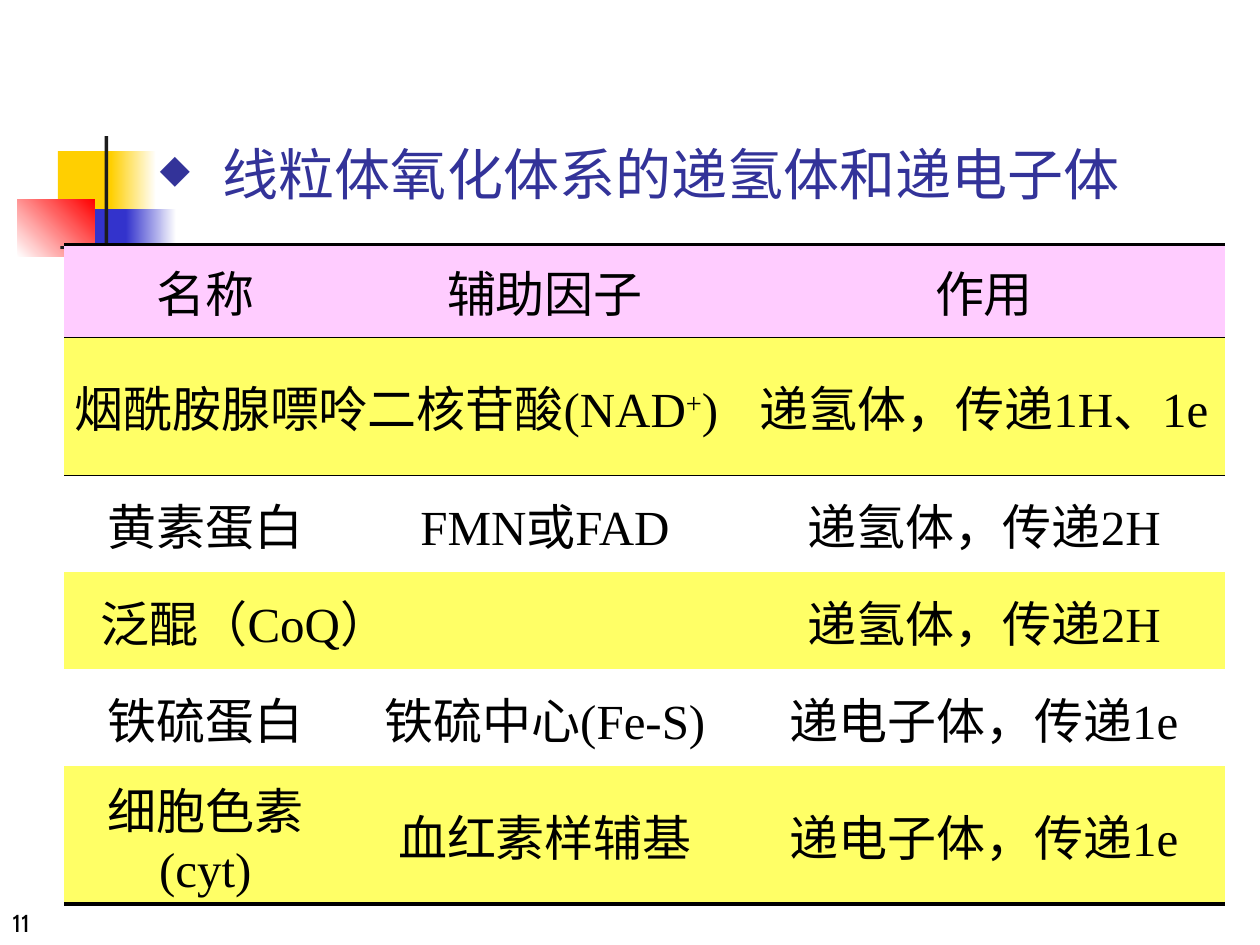
from dataclasses import dataclass

from lxml import etree
from pptx import Presentation
from pptx.dml.color import RGBColor
from pptx.enum.shapes import MSO_SHAPE
from pptx.enum.text import MSO_ANCHOR, MSO_AUTO_SIZE, PP_ALIGN
from pptx.oxml.ns import qn
from pptx.util import Inches, Pt

RECTANGLE = MSO_SHAPE.RECTANGLE
TOP, MIDDLE, BOTTOM = MSO_ANCHOR.TOP, MSO_ANCHOR.MIDDLE, MSO_ANCHOR.BOTTOM
LEFT, CENTER = PP_ALIGN.LEFT, PP_ALIGN.CENTER
FIT_SHAPE = MSO_AUTO_SIZE.SHAPE_TO_FIT_TEXT
PLAIN_TABLE = "{2D5ABB26-0587-4C30-8999-92F81FD0307C}"


@dataclass(frozen=True)
class Theme:
    black: str = "000000"
    white: str = "FFFFFF"
    title: str = "333399"
    gold: str = "FFCF01"
    blue: str = "3333CC"
    red: str = "FF0000"
    ink: str = "1C1C1C"
    header: str = "FFCCFF"
    band: str = "FFFF66"
    heading_font: str = "Cabin"
    table_font: str = "Times New Roman"
    title_size: float = 32
    table_size: float = 28
    number_size: float = 14
    thick: float = 2.25
    thin: float = 1


THEME = Theme()

ORNAMENTS = [
    ((0.46, 1.2, 0.48, 0.52), [THEME.gold], 0),
    ((0.88, 1.2, 0.36, 0.52), [THEME.gold, THEME.white], 0),
    ((0.59, 1.66, 0.46, 0.52), [THEME.blue], 0),
    ((1, 1.66, 0.4, 0.52), [THEME.blue, THEME.white], 0),
    ((0.14, 1.58, 0.61, 0.46), [THEME.white, THEME.red], 45),
    ((0.83, 1.08, 0.03, 1.15), [THEME.ink], 0),
    ((0.48, 1.95, 9, 0.03), [THEME.ink, THEME.white], 0),
]
COLUMNS = [2.24, 3.15, 3.82]
HEIGHTS = [0.74, 0.74, 0.77, 0.77, 0.77, 0.89]
CARRIERS = [
    ["名称", "辅助因子", "作用"],
    [["烟酰胺腺嘌呤二核苷酸(NAD", "+", ")"], None, "递氢体，传递1H、1e"],
    ["黄素蛋白", "FMN或FAD", "递氢体，传递2H"],
    ["泛醌（CoQ）", None, "递氢体，传递2H"],
    ["铁硫蛋白", "铁硫中心(Fe-S)", "递电子体，传递1e"],
    ["细胞色素(cyt)", "血红素样辅基", "递电子体，传递1e"],
]


def write_text(frame, text, *, font, size, color, align=LEFT, anchor=TOP, before=0):
    frame.word_wrap = True
    frame.vertical_anchor = anchor
    para = frame.paragraphs[0]
    para.alignment = align
    para.space_before = Pt(before)
    for index, part in enumerate([text] if isinstance(text, str) else text):
        span = para.add_run()
        span.text = part
        span.font.name = font
        span.font.size = Pt(size)
        span.font.color.rgb = RGBColor.from_string(color)
        if index % 2:
            span.font._element.set("baseline", "30000")
    return para


def set_indent(para, margin, first=0):
    properties = para._p.get_or_add_pPr()
    properties.set("marL", str(Inches(margin)))
    properties.set("indent", str(Inches(first)))
    return properties


def add_ornament(page, box, colors, angle):
    shape = page.shapes.add_shape(RECTANGLE, *map(Inches, box))
    shape.shadow.inherit = False
    shape.line.fill.background()
    if len(colors) == 1:
        shape.fill.solid()
        shape.fill.fore_color.rgb = RGBColor.from_string(colors[0])
        return
    shape.fill.gradient()
    shape.fill.gradient_angle = angle
    for stop, color, position in zip(shape.fill.gradient_stops, colors, (0, 1)):
        stop.color.rgb = RGBColor.from_string(color)
        stop.position = position


def add_title(page, box, text):
    frame = page.shapes.add_textbox(*map(Inches, box)).text_frame
    frame.auto_size = FIT_SHAPE
    para = write_text(frame, text, font=THEME.heading_font, size=THEME.title_size,
                      color=THEME.title, align=CENTER)
    properties = set_indent(para, 0.5, -0.5)
    etree.SubElement(properties, qn("a:buSzPct"), val="70000")
    etree.SubElement(properties, qn("a:buChar"), char="◆")


def add_number(page, box, text):
    frame = page.shapes.add_textbox(*map(Inches, box)).text_frame
    write_text(frame, text, font=THEME.heading_font, size=THEME.number_size,
               color=THEME.black, anchor=BOTTOM)


def set_border(cell, side, width):
    line = etree.Element(qn(f"a:{side}"), w=str(Pt(width)))
    fill = etree.SubElement(line, qn("a:solidFill"))
    etree.SubElement(fill, qn("a:srgbClr"), val=THEME.black)
    properties = cell._tc.get_or_add_tcPr()
    properties.insert(len(properties.findall(qn("a:lnT"))), line)


def style_cell(cell, row):
    color = THEME.header if row == 0 else THEME.band if row % 2 else None
    if color:
        cell.fill.solid()
        cell.fill.fore_color.rgb = RGBColor.from_string(color)
    else:
        cell.fill.background()
    if row == 0:
        set_border(cell, "lnT", THEME.thick)
        set_border(cell, "lnB", THEME.thin)
    elif row == 1:
        set_border(cell, "lnT", THEME.thin)
    elif row == len(CARRIERS) - 1:
        set_border(cell, "lnB", THEME.thick)


def add_carrier_table(page, box):
    table = page.shapes.add_table(len(CARRIERS), len(COLUMNS), *map(Inches, box)).table
    table.first_row = table.horz_banding = False
    table._tbl.tblPr.find(qn("a:tableStyleId")).text = PLAIN_TABLE
    for column, width in zip(table.columns, COLUMNS):
        column.width = Inches(width)
    for row, height in zip(table.rows, HEIGHTS):
        row.height = Inches(height)
    for row, texts in enumerate(CARRIERS):
        merged = texts[1] is None
        if merged:
            table.cell(row, 0).merge(table.cell(row, 1))
        for column, text in enumerate(texts):
            cell = table.cell(row, column)
            style_cell(cell, row)
            if text is None:
                continue
            spans = merged and column == 0
            para = write_text(cell.text_frame, text, font=THEME.table_font,
                              size=THEME.table_size, color=THEME.black,
                              align=LEFT if spans else CENTER,
                              before=THEME.table_size * 0.2)
            cell.vertical_anchor = MIDDLE
            cell.margin_left = cell.margin_right = Inches(0.1)
            cell.margin_top = cell.margin_bottom = Inches(0.05)
            if isinstance(text, list):
                cell.margin_left, cell.margin_right = Inches(0.08), Inches(0)
            elif spans:
                set_indent(para, 0.19)


def main():
    deck = Presentation()
    deck.slide_width, deck.slide_height = Inches(10), Inches(7.5)
    page = deck.slides.add_slide(deck.slide_layouts[6])
    for box, colors, angle in ORNAMENTS:
        add_ornament(page, box, colors, angle)
    add_carrier_table(page, (0.51, 1.94, 9.21, 4.83))
    add_title(page, (0.83, 1.06, 8.5, 0.64), "线粒体氧化体系的递氢体和递电子体")
    add_number(page, (0, 6.99, 0.63, 0.5), "11")
    deck.save("out.pptx")


if __name__ == "__main__":
    main()
